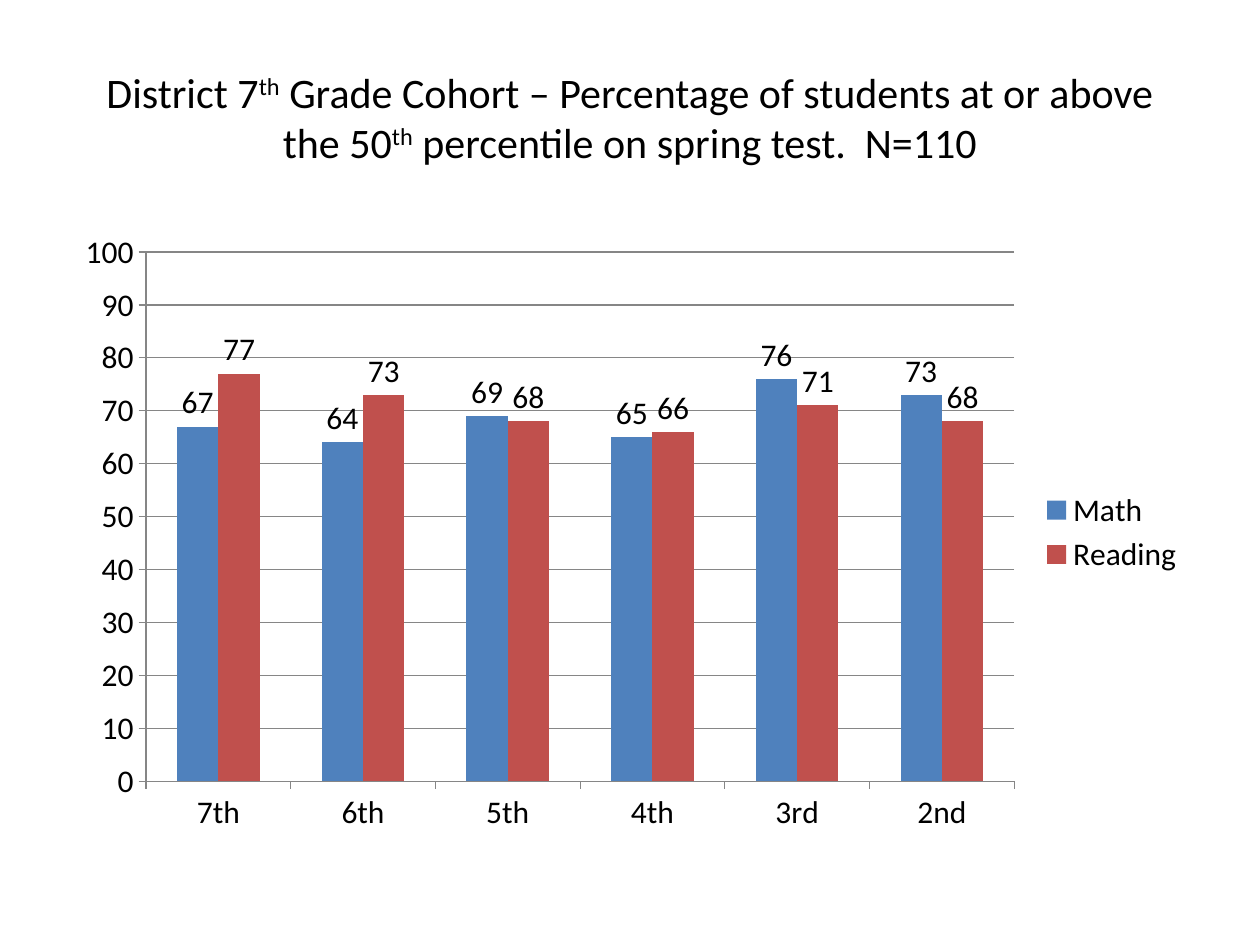
from pptx import Presentation
from pptx.chart.data import CategoryChartData
from pptx.dml.color import RGBColor
from pptx.enum.chart import XL_CHART_TYPE, XL_LABEL_POSITION, XL_LEGEND_POSITION, XL_TICK_MARK
from pptx.enum.text import MSO_ANCHOR, PP_ALIGN
from pptx.util import Inches, Pt

CLUSTERED = XL_CHART_TYPE.COLUMN_CLUSTERED
OUTSIDE_END = XL_LABEL_POSITION.OUTSIDE_END
RIGHT = XL_LEGEND_POSITION.RIGHT
TICK_OUT, TICK_NONE = XL_TICK_MARK.OUTSIDE, XL_TICK_MARK.NONE
MIDDLE, CENTER = MSO_ANCHOR.MIDDLE, PP_ALIGN.CENTER

FONT = "Calibri"
COLORS = {"text": "000000", "axis": "868686", "Math": "4F81BD", "Reading": "C0504D"}
WIDTH, HEIGHT = Inches(10), Inches(7.5)
TITLE_BOX = (0.05, 0.04, 0.9, 1 / 6)
CHART_BOX = (0.05, 0.7 / 3, 0.9, 0.66)

TITLE_SPANS = [
    ("District 7", False),
    ("th", True),
    (" Grade Cohort – Percentage of students at or above the 50", False),
    ("th", True),
    (" percentile on spring test.  N=110", False),
]
GRADES = ["7th", "6th", "5th", "4th", "3rd", "2nd"]
SCORES = {"Math": [67, 64, 69, 65, 76, 73], "Reading": [77, 73, 68, 66, 71, 68]}


def color(name):
    """Return the named colour."""
    return RGBColor.from_string(COLORS[name])


def place(shares):
    """Turn shares of the slide's size into left, top, width and height."""
    return [round(share * size) for share, size in zip(shares, (WIDTH, HEIGHT) * 2)]


def style_font(font, size):
    """Set the common typeface and text colour at the given size."""
    font.name = FONT
    font.size = Pt(size)
    font.color.rgb = color("text")


def add_title(page, shares):
    """Write the centred title with raised ordinal endings."""
    frame = page.shapes.add_textbox(*place(shares)).text_frame
    frame.word_wrap = True
    frame.vertical_anchor = MIDDLE
    para = frame.paragraphs[0]
    para.alignment = CENTER
    style_font(para.font, 24)
    for text, raised in TITLE_SPANS:
        span = para.add_run()
        span.text = text
        if raised:
            span.font._element.set("baseline", "30000")


def style_axes(chart):
    """Set the scale, ticks and grey lines of both axes."""
    values = chart.value_axis
    values.minimum_scale, values.maximum_scale, values.major_unit = 0, 100, 10
    values.has_major_gridlines = True
    for axis in (chart.category_axis, values):
        axis.major_tick_mark = TICK_OUT
        axis.minor_tick_mark = TICK_NONE
    for part in (chart.category_axis, values, values.major_gridlines):
        part.format.line.color.rgb = color("axis")
        part.format.line.width = Pt(0.75)


def add_scores_chart(page, shares):
    """Draw the clustered columns of both subjects by grade."""
    data = CategoryChartData(number_format="General")
    data.categories = GRADES
    for subject, scores in SCORES.items():
        data.add_series(subject, scores)
    chart = page.shapes.add_chart(CLUSTERED, *place(shares), data).chart
    style_font(chart.font, 18)
    chart.has_title = False
    chart.has_legend = True
    chart.legend.position = RIGHT
    chart.legend.include_in_layout = False
    style_axes(chart)
    plot = chart.plots[0]
    plot.gap_width, plot.overlap = 150, 0
    plot.vary_by_categories = False
    for series in plot.series:
        series.format.fill.solid()
        series.format.fill.fore_color.rgb = color(series.name)
        series.invert_if_negative = False
        series.data_labels.show_value = True
        series.data_labels.position = OUTSIDE_END


def main():
    """Build and save the deck."""
    deck = Presentation()
    deck.slide_width, deck.slide_height = WIDTH, HEIGHT
    page = deck.slides.add_slide(deck.slide_layouts[6])
    add_title(page, TITLE_BOX)
    add_scores_chart(page, CHART_BOX)
    deck.save("out.pptx")


if __name__ == "__main__":
    main()
